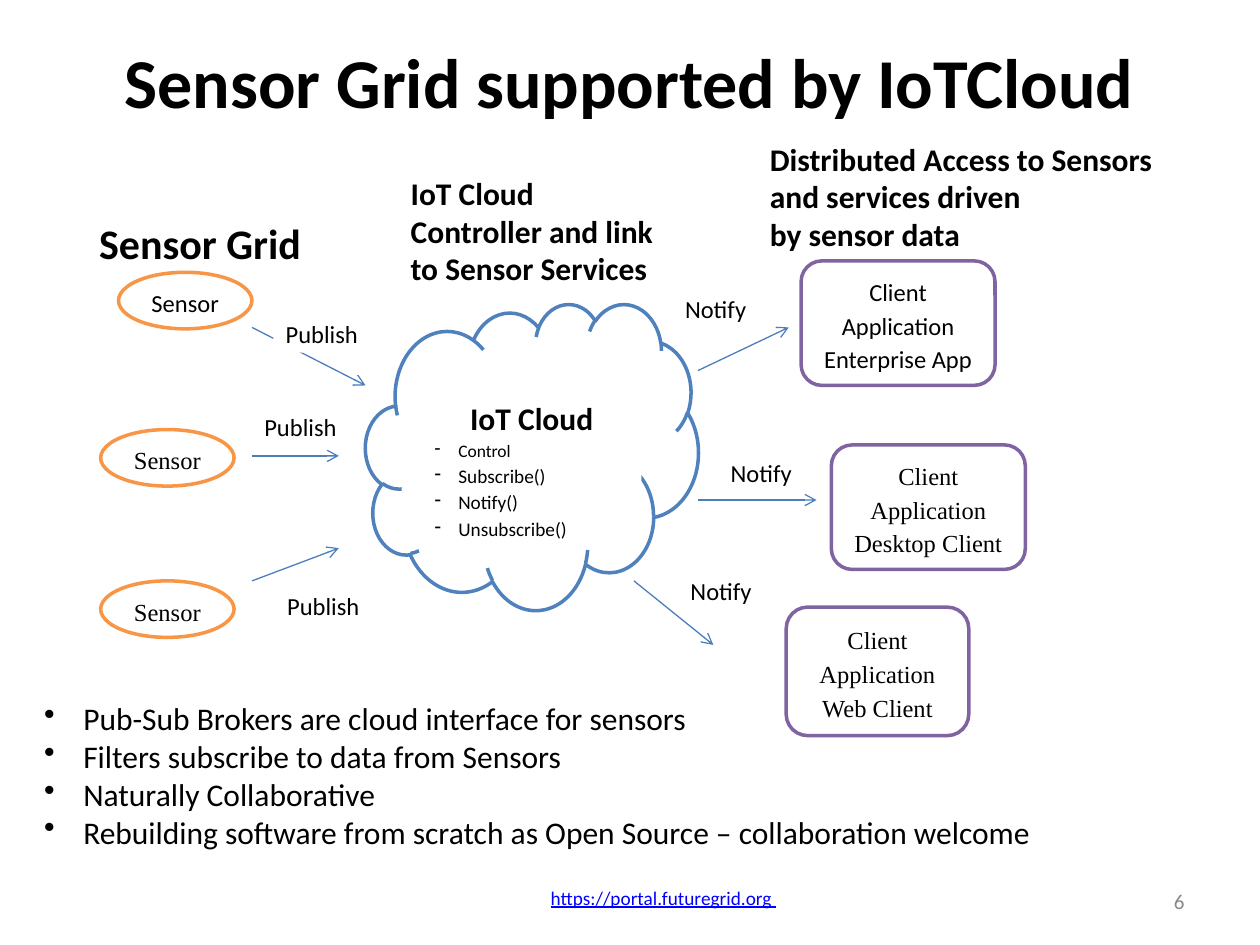
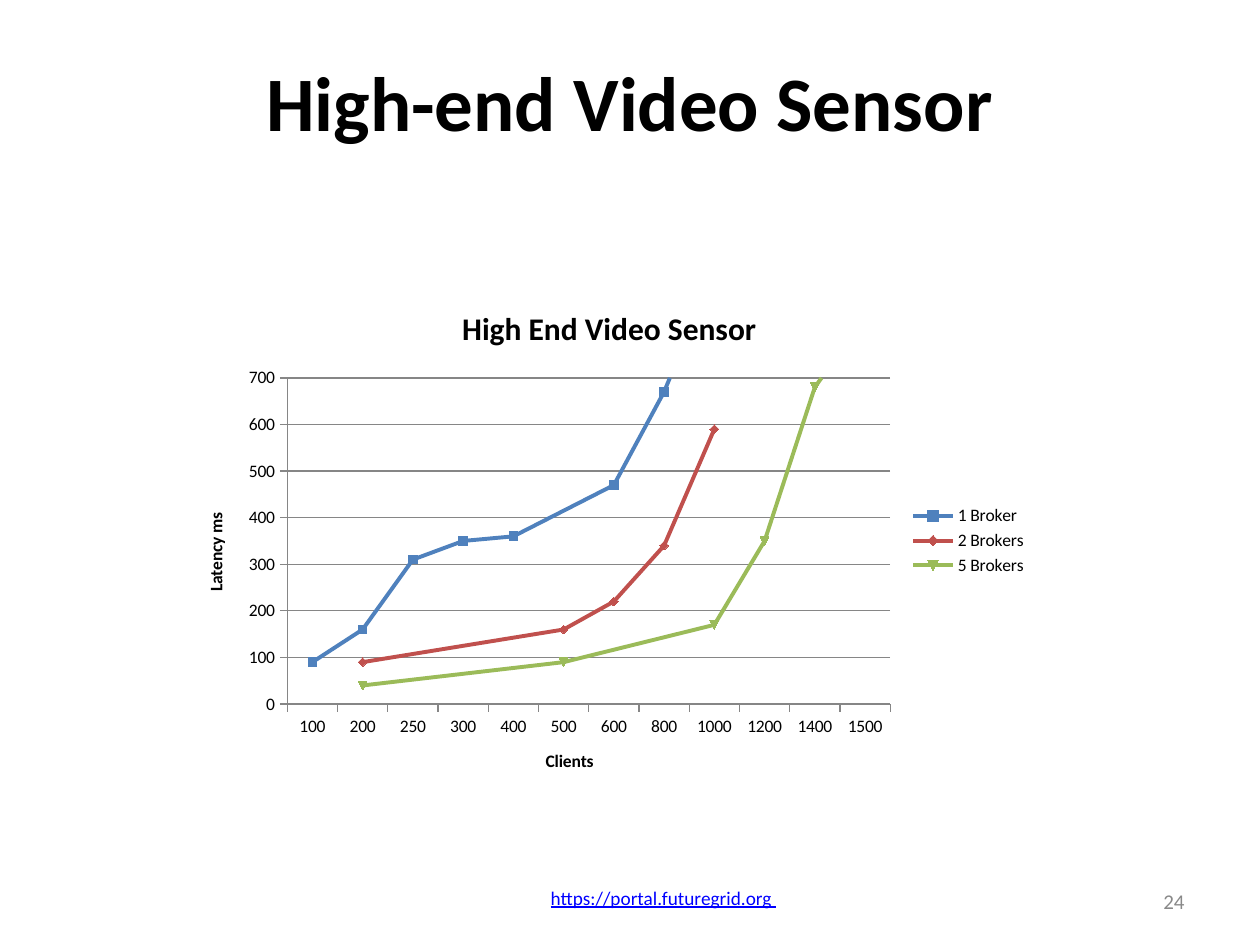
from dataclasses import dataclass, replace

from lxml import etree
from pptx import Presentation
from pptx.chart.data import CategoryChartData
from pptx.dml.color import RGBColor
from pptx.enum.chart import XL_CHART_TYPE, XL_LEGEND_POSITION, XL_TICK_MARK
from pptx.enum.shapes import MSO_CONNECTOR, MSO_SHAPE
from pptx.enum.text import MSO_ANCHOR, PP_ALIGN
from pptx.oxml.ns import qn
from pptx.util import Cm, Pt

STRAIGHT = MSO_CONNECTOR.STRAIGHT
CLOUD, ELLIPSE = MSO_SHAPE.CLOUD, MSO_SHAPE.OVAL
RECTANGLE, ROUNDED = MSO_SHAPE.RECTANGLE, MSO_SHAPE.ROUNDED_RECTANGLE
TOP, MIDDLE = MSO_ANCHOR.TOP, MSO_ANCHOR.MIDDLE
LEFT, CENTER, RIGHT = PP_ALIGN.LEFT, PP_ALIGN.CENTER, PP_ALIGN.RIGHT
LINE_MARKERS = XL_CHART_TYPE.LINE_MARKERS
LEGEND_RIGHT = XL_LEGEND_POSITION.RIGHT
TICK_OUTSIDE = XL_TICK_MARK.OUTSIDE

SANS, SERIF = "Calibri", "Times New Roman"
TITLE_ONLY = 5
COLORS = {
    "text": "000000",
    "white": "FFFFFF",
    "link": "0000FF",
    "number": "898989",
    "grid": "868686",
    "arrow": "4B7EBC",
    "blue": "4F81BD",
    "orange": "F79646",
    "purple": "8064A2",
    "red": "C0504D",
    "green": "9BBB59",
}


@dataclass(frozen=True)
class Box:
    """A place on the slide, in centimetres."""
    left: float
    top: float
    width: float
    height: float

    def lengths(self) -> tuple:
        return Cm(self.left), Cm(self.top), Cm(self.width), Cm(self.height)


@dataclass(frozen=True)
class TextStyle:
    size: float
    color: str = "text"
    bold: bool = False
    underline: bool = False
    font: str = SANS
    align: PP_ALIGN = LEFT
    anchor: MSO_ANCHOR = TOP
    line_spacing: float = 1.0
    bullet: str = ""
    indent: float = 0
    wrap: bool = True


@dataclass(frozen=True)
class Node:
    text: str
    box: Box
    font: str = SANS


@dataclass(frozen=True)
class Arrow:
    begin_x: float
    begin_y: float
    end_x: float
    end_y: float


@dataclass(frozen=True)
class Label:
    text: str
    left: float
    top: float


TITLE = TextStyle(40, bold=True, align=CENTER, anchor=MIDDLE)
FOOTER = TextStyle(11, "link", underline=True, align=CENTER, anchor=MIDDLE)
NUMBER = TextStyle(12, "number", align=RIGHT, anchor=MIDDLE)
HEADING = TextStyle(18, bold=True, wrap=False)
NODE = TextStyle(14, align=CENTER, anchor=MIDDLE, line_spacing=1.15)
LABEL = TextStyle(14, line_spacing=1.15)
CLOUD_NAME = TextStyle(18, bold=True, align=CENTER, line_spacing=1.15)
CLOUD_CALL = TextStyle(11, line_spacing=1.15, bullet="-", indent=0.48)
POINT = TextStyle(18, bullet="•", indent=0.79)

FOOTER_BOX = Box(8.74, 17.58, 9.27, 1.02)
NUMBER_BOX = Box(18.21, 17.65, 5.92, 1.02)

SENSORS = [
    Node("Sensor", Box(2.39, 5.49, 2.69, 1.14)),
    Node("Sensor", Box(2.03, 8.66, 2.69, 1.14), SERIF),
    Node("Sensor", Box(2.03, 11.71, 2.69, 1.14), SERIF),
]
CLIENTS = [
    Node("Client Application Enterprise App", Box(16.15, 5.26, 3.91, 2.51)),
    Node("Client Application Desktop Client", Box(16.76, 8.97, 3.91, 2.51), SERIF),
    Node("Client Application Web Client", Box(15.85, 12.24, 3.68, 2.59), SERIF),
]
ARROWS = [
    Arrow(5.08, 6.6, 7.37, 7.77),
    Arrow(5.08, 9.19, 6.83, 9.19),
    Arrow(5.08, 11.71, 6.83, 11.05),
    Arrow(14.07, 7.47, 15.9, 6.6),
    Arrow(14.07, 10.08, 16.46, 10.08),
    Arrow(12.78, 11.71, 14.38, 13),
]
LABELS = [
    Label("Publish", 5.51, 6.22),
    Label("Publish", 5.08, 8.1),
    Label("Publish", 5.54, 11.71),
    Label("Notify", 13.56, 5.72),
    Label("Notify", 14.48, 9.02),
    Label("Notify", 13.67, 11.4),
]
CLIENT_COUNTS = [100, 200, 250, 300, 400, 500, 600, 800, 1000, 1200, 1400, 1500]
LATENCIES = [
    ("1 Broker", "blue", {100: 90, 200: 160, 250: 310, 300: 350, 400: 360,
                          600: 470, 800: 670, 1000: 930}),
    ("2 Brokers", "red", {200: 90, 500: 160, 600: 220, 800: 340, 1000: 590}),
    ("5 Brokers", "green", {200: 40, 500: 90, 1000: 170, 1200: 350,
                            1400: 680, 1500: 830}),
]


def rgb(name: str) -> RGBColor:
    return RGBColor.from_string(COLORS[name])


def style_font(font, style: TextStyle) -> None:
    font.name, font.size = style.font, Pt(style.size)
    font.bold, font.underline = style.bold, style.underline
    font.color.rgb = rgb(style.color)


def style_paragraph(paragraph, style: TextStyle) -> None:
    if style.bullet:
        properties = paragraph._p.get_or_add_pPr()
        properties.set("marL", str(Cm(style.indent)))
        properties.set("indent", str(-Cm(style.indent)))
        etree.SubElement(properties, qn("a:buChar")).set("char", style.bullet)
    paragraph.alignment = style.align
    paragraph.line_spacing = style.line_spacing
    for run in paragraph.runs:
        style_font(run.font, style)


def set_text(shape, text: str, style: TextStyle) -> None:
    frame = shape.text_frame
    frame.text = text
    frame.word_wrap = style.wrap
    frame.vertical_anchor = style.anchor
    for paragraph in frame.paragraphs:
        style_paragraph(paragraph, style)


def add_text(slide, box: Box, text: str, style: TextStyle) -> None:
    set_text(slide.shapes.add_textbox(*box.lengths()), text, style)


def add_outline(slide, kind: MSO_SHAPE, box: Box, line: str = ""):
    """Add a white shape, with a coloured outline if one is named."""
    shape = slide.shapes.add_shape(kind, *box.lengths())
    shape.shadow.inherit = False
    shape.fill.solid()
    shape.fill.fore_color.rgb = rgb("white")
    if line:
        shape.line.color.rgb = rgb(line)
        shape.line.width = Pt(2)
    else:
        shape.line.fill.background()
    return shape


def add_arrow(slide, arrow: Arrow) -> None:
    connector = slide.shapes.add_connector(
        STRAIGHT, Cm(arrow.begin_x), Cm(arrow.begin_y), Cm(arrow.end_x), Cm(arrow.end_y))
    connector.line.color.rgb = rgb("arrow")
    connector.line.width = Pt(0.75)
    properties = connector.element.spPr
    etree.SubElement(properties.find(qn("a:ln")), qn("a:tailEnd")).set("type", "arrow")
    etree.SubElement(properties, qn("a:effectLst"))


def add_titled_slide(presentation, title: str, box: Box, style: TextStyle, number: int):
    slide = presentation.slides.add_slide(presentation.slide_layouts[TITLE_ONLY])
    shape = slide.shapes.title
    shape.left, shape.top, shape.width, shape.height = box.lengths()
    set_text(shape, title, style)
    add_text(slide, FOOTER_BOX, "https://portal.futuregrid.org ", FOOTER)
    add_text(slide, NUMBER_BOX, str(number), NUMBER)
    return slide


def add_cloud(slide) -> None:
    add_outline(slide, CLOUD, Box(7.37, 6.12, 6.71, 6.17), "blue")


def add_cloud_panel(slide) -> None:
    panel = add_outline(slide, RECTANGLE, Box(8.51, 7.8, 4.42, 3.28))
    set_text(panel, "IoT Cloud", CLOUD_NAME)
    for call in ("Control", "Subscribe()", "Notify()", "Unsubscribe()"):
        paragraph = panel.text_frame.add_paragraph()
        paragraph.text = call
        style_paragraph(paragraph, replace(CLOUD_CALL, size=10 if call == "Control" else 11))


def build_sensor_grid(presentation) -> None:
    slide = add_titled_slide(presentation, "Sensor Grid supported by IoTCloud",
                             Box(0.2, 0.03, 24.97, 3.18), TITLE, 6)
    add_cloud(slide)
    for sensor in SENSORS:
        shape = add_outline(slide, ELLIPSE, sensor.box, "orange")
        set_text(shape, sensor.text, replace(NODE, font=sensor.font))
        frame = shape.text_frame
        frame.margin_left = frame.margin_right = frame.margin_top = frame.margin_bottom = 0
    for client in CLIENTS:
        shape = add_outline(slide, ROUNDED, client.box, "purple")
        set_text(shape, client.text, replace(NODE, font=client.font))
    for arrow in ARROWS:
        add_arrow(slide, arrow)
    for label in LABELS:
        shape = add_outline(slide, RECTANGLE, Box(label.left, label.top, 1.98, 0.89))
        set_text(shape, label.text, LABEL)
        shape.text_frame.margin_right = 0
    add_cloud_panel(slide)
    add_text(slide, Box(1.75, 4.27, 5.08, 1.27), "Sensor Grid", replace(HEADING, size=24, wrap=True))
    add_text(slide, Box(8.03, 3.38, 5.59, 2.57),
             "IoT Cloud\nController and link\nto Sensor Services", HEADING)
    add_text(slide, Box(15.27, 2.69, 8.43, 2.57),
             "Distributed Access to Sensors\nand services driven\nby sensor data", HEADING)
    add_text(slide, Box(0.64, 13.97, 21.21, 3.33), "\n".join((
        "Pub-Sub Brokers are cloud interface for sensors",
        "Filters subscribe to data from Sensors",
        "Naturally Collaborative",
        "Rebuilding software from scratch as Open Source – collaboration welcome",
    )), POINT)


def set_chart_title(owner, text: str, size: float) -> None:
    """Title a chart or one of its axes."""
    owner.has_title = True
    title = owner.chart_title if hasattr(owner, "chart_title") else owner.axis_title
    title.text_frame.text = text
    style_font(title.text_frame.paragraphs[0].runs[0].font, TextStyle(size, bold=True))


def add_latency_chart(slide) -> None:
    data = CategoryChartData()
    data.categories = [str(count) for count in CLIENT_COUNTS]
    for name, _, latencies in LATENCIES:
        data.add_series(name, [latencies.get(count) for count in CLIENT_COUNTS])
    box = Box(3.61, 5.72, 17.35, 10.36)
    chart = slide.shapes.add_chart(LINE_MARKERS, *box.lengths(), data).chart
    style_font(chart.font, TextStyle(10))
    set_chart_title(chart, "High End Video Sensor", 18)
    chart.has_legend = True
    chart.legend.position = LEGEND_RIGHT
    chart.legend.include_in_layout = False
    for axis, text in ((chart.category_axis, "Clients"), (chart.value_axis, "Latency ms")):
        set_chart_title(axis, text, 10)
        axis.major_tick_mark = TICK_OUTSIDE
        axis.format.line.color.rgb = rgb("grid")
    values = chart.value_axis
    values.minimum_scale, values.maximum_scale, values.major_unit = 0, 700, 100
    values.major_gridlines.format.line.color.rgb = rgb("grid")
    chart.plots[0].vary_by_categories = False
    for series, (_, color, _) in zip(chart.plots[0].series, LATENCIES):
        series.smooth = False
        series.format.line.color.rgb = rgb(color)
        series.format.line.width = Pt(2.25)
    chart.element.find(".//" + qn("c:dispBlanksAs")).set("val", "span")


def build_video_sensor(presentation) -> None:
    slide = add_titled_slide(presentation, "High-end Video Sensor",
                             Box(1.27, 0.43, 22.86, 3.18), replace(TITLE, size=44), 24)
    add_latency_chart(slide)


def main() -> None:
    presentation = Presentation()
    presentation.slide_width, presentation.slide_height = Cm(25.4), Cm(19.05)
    build_sensor_grid(presentation)
    build_video_sensor(presentation)
    presentation.save("out.pptx")


if __name__ == "__main__":
    main()
